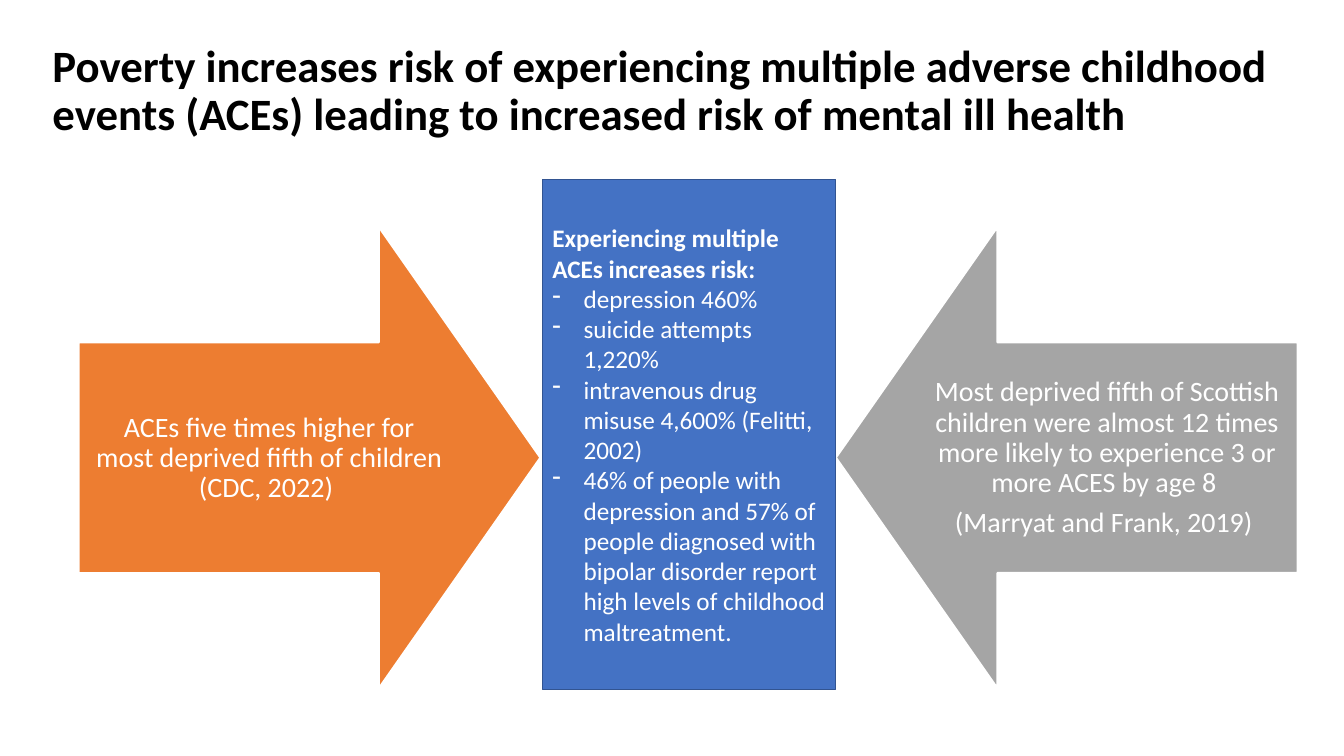
from lxml import etree
from pptx import Presentation
from pptx.dml.color import RGBColor
from pptx.enum import shapes, text
from pptx.oxml import ns
from pptx.util import Inches, Pt

COLORS = {
    "title": "000000",
    "text": "FFFFFF",
    "arrow_line": "FFFFFF",
    "poverty": "ED7D31",
    "scotland": "A5A5A5",
    "risk": "4472C4",
    "risk_line": "325491",
}


def add_words(paragraph, words, size, color, bold=False):
    run = paragraph.add_run()
    run.text = words
    run.font.name = "Calibri"
    run.font.size = Pt(size)
    run.font.bold = bold
    run.font.color.rgb = RGBColor.from_string(COLORS[color])


def add_block(preset, left, top, width, height, fill, line, line_width):
    block = slide.shapes.add_shape(
        preset, Inches(left), Inches(top), Inches(width), Inches(height))
    block.shadow.inherit = False
    block.fill.solid()
    block.fill.fore_color.rgb = RGBColor.from_string(COLORS[fill])
    block.line.color.rgb = RGBColor.from_string(COLORS[line])
    block.line.width = Pt(line_width)
    return block


prs = Presentation()
prs.slide_width = Inches(13.33)
prs.slide_height = Inches(7.5)
slide = prs.slides.add_slide(prs.slide_layouts[5])

headline = slide.shapes.title
headline.left, headline.top = Inches(0.42), Inches(0.38)
headline.width, headline.height = Inches(12.37), Inches(1.06)
headline.text_frame.word_wrap = True
headline.text_frame.auto_size = text.MSO_AUTO_SIZE.NONE
headline.text_frame.vertical_anchor = text.MSO_ANCHOR.MIDDLE
headline_line = headline.text_frame.paragraphs[0]
headline_line.alignment = text.PP_ALIGN.LEFT
headline_line.line_spacing = 0.9
headline_line.space_before = Pt(0)
add_words(
    headline_line,
    "Poverty increases risk of experiencing multiple adverse childhood "
    "events (ACEs) leading to increased risk of mental ill health",
    32, "title", True)

arrows = [
    (0.78, 270, 0.78, "poverty",
     ["ACEs five times higher for most deprived fifth of children (CDC, 2022) "]),
    (8.29, 90, 9.09, "scotland",
     ["Most deprived fifth of Scottish children were almost 12 times "
      "more likely to experience 3 or more ACES by age 8 ",
      "(Marryat and Frank, 2019) "]),
]
for arrow_left, rotation, finding_left, fill, findings in arrows:
    arrow = add_block(shapes.MSO_SHAPE.DOWN_ARROW, arrow_left, 2.25, 4.58, 4.58,
                      fill, "arrow_line", 1.5)
    arrow.rotation = rotation
    arrow.adjustments[0] = 0.5
    arrow.adjustments[1] = 0.35

    finding_box = slide.shapes.add_textbox(
        Inches(finding_left), Inches(3.4), Inches(3.78), Inches(2.29))
    frame = finding_box.text_frame
    frame.word_wrap = True
    frame.vertical_anchor = text.MSO_ANCHOR.MIDDLE
    frame.margin_left = frame.margin_right = Inches(0.16)
    frame.margin_top = frame.margin_bottom = Inches(0.16)
    for index, finding in enumerate(findings):
        paragraph = frame.add_paragraph() if index else frame.paragraphs[0]
        paragraph.alignment = text.PP_ALIGN.CENTER
        paragraph.line_spacing = 0.9
        paragraph.space_after = Pt(7)
        add_words(paragraph, finding, 20, "text")

risk_panel = add_block(shapes.MSO_SHAPE.RECTANGLE, 5.38, 1.78, 2.91, 5.06,
                       "risk", "risk_line", 1)
risk_frame = risk_panel.text_frame
risk_frame.word_wrap = True
risk_frame.vertical_anchor = text.MSO_ANCHOR.MIDDLE
risk_heading = risk_frame.paragraphs[0]
risk_heading.alignment = text.PP_ALIGN.LEFT
add_words(risk_heading, "Experiencing multiple ACEs increases risk:", 18, "text", True)

risks = [
    "depression 460%",
    "suicide attempts 1,220%",
    "intravenous drug misuse 4,600% (Felitti, 2002)",
    "46% of people with depression and 57% of people diagnosed with "
    "bipolar disorder report high levels of childhood maltreatment.",
]
for risk in risks:
    paragraph = risk_frame.add_paragraph()
    paragraph.alignment = text.PP_ALIGN.LEFT
    add_words(paragraph, risk, 18, "text")
    properties = paragraph._p.get_or_add_pPr()
    properties.set("marL", str(Inches(0.31)))
    properties.set("indent", str(-Inches(0.31)))
    etree.SubElement(properties, ns.qn("a:buChar")).set("char", "-")

prs.save("out.pptx")
